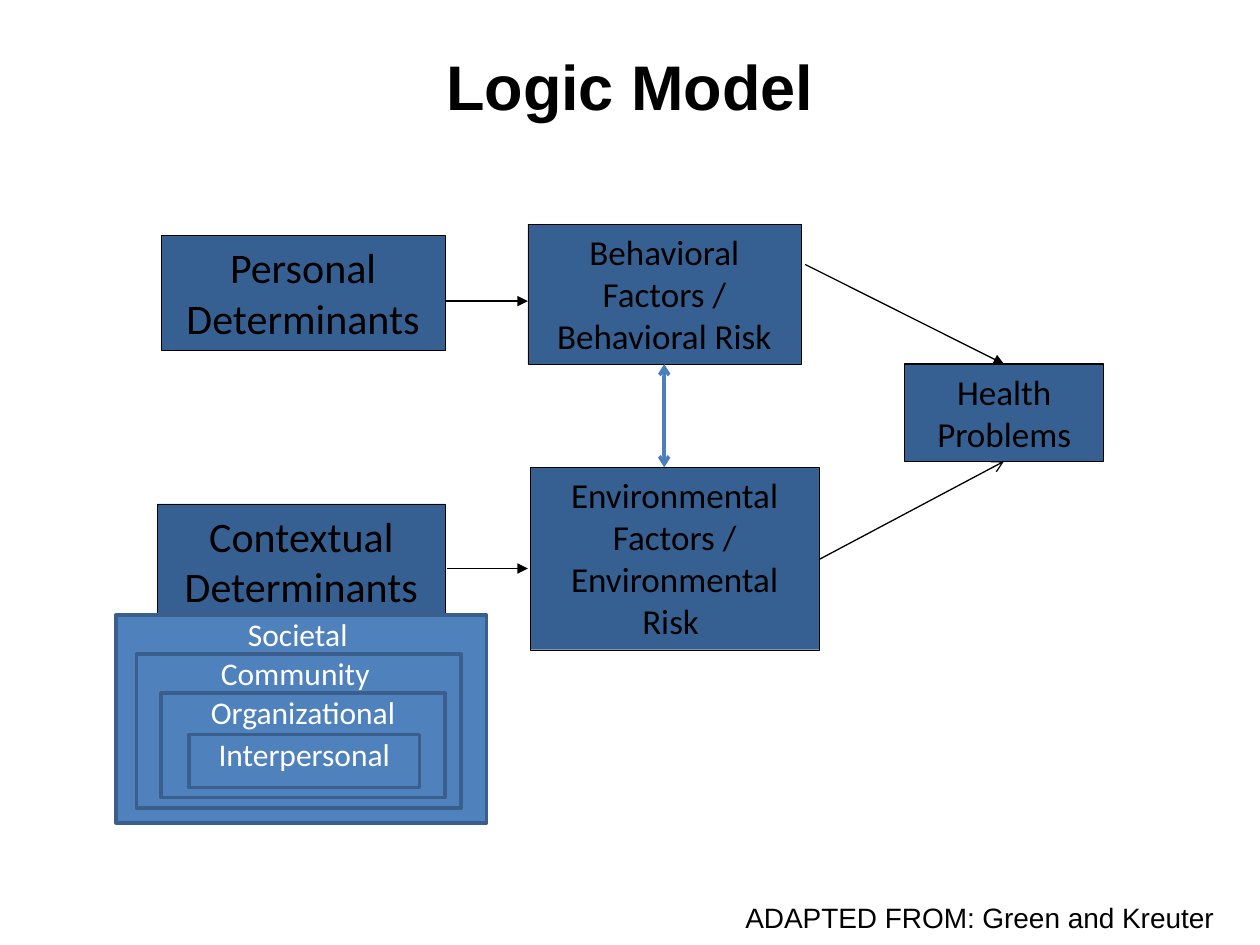
from lxml import etree
from pptx import Presentation
from pptx import util as u
from pptx.dml.color import RGBColor
from pptx.enum import shapes, text
from pptx.oxml.ns import qn

BLACK = RGBColor(0x00, 0x00, 0x00)
WHITE = RGBColor(0xFF, 0xFF, 0xFF)
NAVY = RGBColor(0x37, 0x60, 0x92)
BLUE = RGBColor(0x4F, 0x81, 0xBD)
EDGE = RGBColor(0x3A, 0x5F, 0x8C)
LINK = RGBColor(0x4B, 0x7E, 0xBC)

FACTORS = [
    ("Personal Determinants", 24, 0.25, (0.91, 0.23, 5.72, 2.31)),
    ("Behavioral\nFactors / Behavioral Risk", 20, 0.25, (8.3, 0, 5.51, 2.82)),
    ("Environmental\nFactors / Environmental Risk ", 20, 0.25, (8.35, 4.9, 5.82, 3.68)),
    ("Health\nProblems", 20, 0.75, (15.9, 2.82, 4.01, 1.96)),
    ("Contextual Determinants", 24, 0.25, (0.84, 5.64, 5.79, 2.74)),
]
ARROWS = [
    ((13.89, 0.81), (17.9, 2.82), BLACK, 0.75, {"tailEnd": "triangle"}),
    ((14.17, 6.76), (17.9, 4.78), BLACK, 0.75, {"tailEnd": "arrow"}),
    ((6.63, 1.55), (8.3, 1.55), BLACK, 0.75, {"tailEnd": "triangle"}),
    ((6.68, 6.94), (8.3, 6.94), BLACK, 0.75, {"tailEnd": "triangle"}),
    ((11.05, 2.82), (11.05, 4.9), LINK, 2, {"headEnd": "arrow", "tailEnd": "arrow"}),
]
LEVELS = [
    ("Societal ", (0, 0, 7.47, 4.19)),
    ("Community ", (0.41, 0.79, 6.55, 3.1)),
    ("Organizational", (0.91, 1.57, 5.72, 2.11)),
    ("Interpersonal", (1.47, 2.41, 4.65, 1.07)),
]


def write(sp, words, size, font, color, anchor, bold=False):
    tf = sp.text_frame
    tf.word_wrap = True
    tf.vertical_anchor = anchor
    p = tf.paragraphs[0]
    p.text = words
    p.alignment = text.PP_ALIGN.CENTER
    for r in p.runs:
        r.font.size = u.Pt(size)
        r.font.name = font
        r.font.bold = bold
        r.font.color.rgb = color


def add_box(s, left, top, box, words, size, color, fill, line, weight):
    x, y, w, h = box
    sp = s.shapes.add_shape(shapes.MSO_SHAPE.RECTANGLE, u.Cm(left + x), u.Cm(top + y), u.Cm(w), u.Cm(h))
    sp.shadow.inherit = False
    sp.fill.solid()
    sp.fill.fore_color.rgb = fill
    sp.line.color.rgb = line
    sp.line.width = u.Pt(weight)
    write(sp, words, size, "Calibri", color, text.MSO_ANCHOR.TOP)
    return sp


def add_arrow(s, left, top, start, end, color, weight, ends):
    points = [u.Cm(o + v) for pt in (start, end) for o, v in zip((left, top), pt)]
    c = s.shapes.add_connector(shapes.MSO_CONNECTOR.STRAIGHT, *points)
    c.line.color.rgb = color
    c.line.width = u.Pt(weight)
    ln = c.line._get_or_add_ln()
    for tag, kind in ends.items():
        etree.SubElement(ln, qn("a:" + tag), type=kind)
    etree.SubElement(c._element.spPr, qn("a:effectLst"))


def add_title(s, left, top, width, height):
    sp = s.shapes.title
    sp.left, sp.top, sp.width, sp.height = map(u.Cm, (left, top, width, height))
    write(sp, "Logic Model", 36, "Arial", BLACK, text.MSO_ANCHOR.TOP, bold=True)


def add_model(s, left, top):
    for words, size, weight, box in FACTORS:
        add_box(s, left, top, box, words, size, BLACK, NAVY, BLACK, weight)
    for arrow in ARROWS:
        add_arrow(s, left, top, *arrow)


def add_levels(s, left, top):
    for words, box in LEVELS:
        tf = add_box(s, left, top, box, words, 18, WHITE, BLUE, EDGE, 2).text_frame
        tf.margin_left = tf.margin_top = tf.margin_right = tf.margin_bottom = 0


def add_credit(s, left, top, width, height):
    sp = s.shapes.add_textbox(*map(u.Cm, (left, top, width, height)))
    write(sp, "ADAPTED FROM: Green and Kreuter ", 16, "Arial", BLACK, text.MSO_ANCHOR.MIDDLE)


def main():
    prs = Presentation()
    prs.slide_width, prs.slide_height = u.Cm(25.4), u.Cm(19.05)
    s = prs.slides.add_slide(prs.slide_layouts[5])
    add_title(s, 1.27, 0.84, 22.86, 1.93)
    add_model(s, 2.34, 4.52)
    add_levels(s, 2.34, 12.4)
    add_credit(s, 14.38, 17.98, 10.9, 1.02)
    prs.save("out.pptx")


if __name__ == "__main__":
    main()
